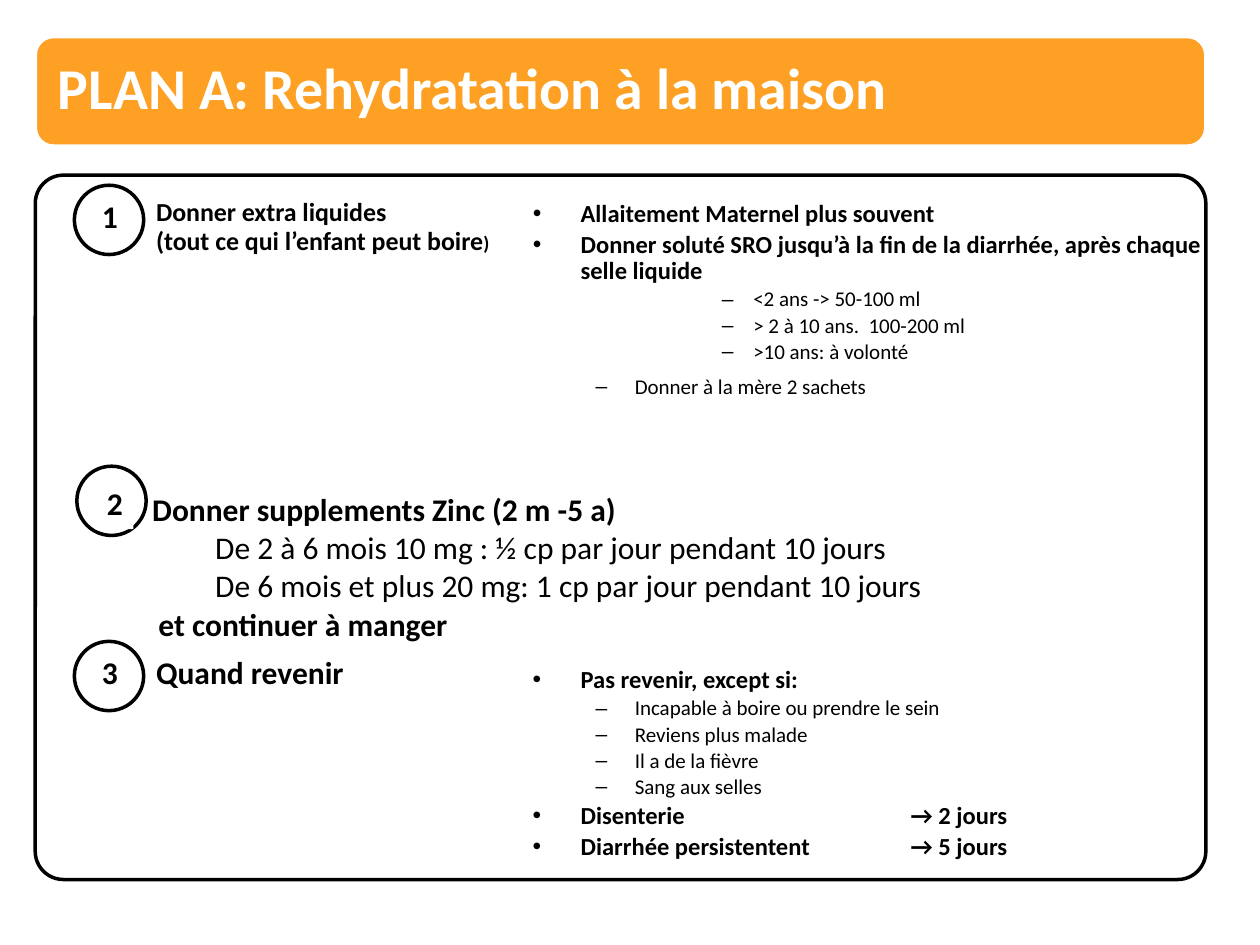
from lxml import etree
from pptx import Presentation
from pptx.dml.color import RGBColor
from pptx.enum.shapes import MSO_SHAPE as SHAPE
from pptx.enum.text import MSO_ANCHOR as ANCHOR, PP_ALIGN as ALIGN
from pptx.oxml.ns import qn
from pptx.util import Inches, Pt

BLACK, WHITE, ORANGE = "000000", "FFFFFF", "FDA023"
FONT = "Calibri"

# Paragraph styles: size, bold, bullet, left margin, hanging indent, level
BASE = dict(size=18, bold=True, bullet=None, margin=0, indent=0, level=0,
            spacing=0.9, before=0.17, align=ALIGN.LEFT, color=BLACK, tab=None)
HEAD = BASE
LEAD = BASE | dict(size=14.8, spacing=0.8)
POINT = BASE | dict(size=14, bullet="•", margin=0.38, indent=-0.38, tab=3)
DASH = BASE | dict(size=12, bold=False, bullet="–", margin=0.81, indent=-0.31, level=1)
DOSE = DASH | dict(margin=1.75, indent=-0.25, level=3)
ZINC = BASE | dict(spacing=1.0, before=0, align=ALIGN.JUSTIFY)
ZINC_DOSE = ZINC | dict(bold=False, margin=0.5, level=1)
TITLE = BASE | dict(size=33, before=0, color=WHITE)


def rgb(color):
    return RGBColor.from_string(color)


def add_box(shapes, kind, at, fill, line=None, corner=None):
    s = shapes.add_shape(kind, *map(Inches, at))
    s.shadow.inherit = False
    s.fill.solid()
    s.fill.fore_color.rgb = rgb(fill)
    if line:
        s.line.color.rgb = rgb(line)
        s.line.width = Pt(2)
    else:
        s.line.fill.background()
    if corner is not None:
        s.adjustments[0] = corner
    return s


def format_paragraph(p, style):
    values = dict(level=style["level"], alignment=style["align"],
                  line_spacing=style["spacing"],
                  space_before=Pt(style["before"] * style["size"]))
    for name, value in values.items():
        setattr(p, name, value)
    pPr = p._p.get_or_add_pPr()
    pPr.set("marL", str(Inches(style["margin"])))
    pPr.set("indent", str(Inches(style["indent"])))
    if style["bullet"]:
        etree.SubElement(pPr, qn("a:buFont"), typeface="Arial")
        etree.SubElement(pPr, qn("a:buChar"), char=style["bullet"])
    if style["tab"]:
        tabs = etree.SubElement(pPr, qn("a:tabLst"))
        etree.SubElement(tabs, qn("a:tab"), pos=str(Inches(style["tab"])), algn="l")


def add_run(p, text, style):
    r = p.add_run()
    r.text = text
    values = dict(name=FONT, size=Pt(style["size"]), bold=style["bold"])
    for name, value in values.items():
        setattr(r.font, name, value)
    r.font.color.rgb = rgb(style["color"])


def write(s, lines, anchor=ANCHOR.TOP):
    """Fill a shape with (style, text) lines."""
    tf = s.text_frame
    tf.word_wrap = True
    tf.vertical_anchor = anchor
    for i, (style, text) in enumerate(lines):
        p = tf.add_paragraph() if i else tf.paragraphs[0]
        format_paragraph(p, style)
        add_run(p, text, style)
    return tf


def add_text(shapes, at, lines, anchor=ANCHOR.TOP):
    return write(shapes.add_textbox(*map(Inches, at)), lines, anchor)


def add_step_number(shapes, number, circle, label):
    add_box(shapes, SHAPE.OVAL, (*circle, 0.55, 0.55), WHITE, BLACK)
    write(add_box(shapes, SHAPE.RECTANGLE, label, WHITE), [(HEAD, number)])


def add_title(shapes, text):
    group = shapes.add_group_shape().shapes
    add_box(group, SHAPE.ROUNDED_RECTANGLE, (0.28, 0.29, 9.29, 0.87), ORANGE, WHITE)
    tf = add_text(group, (0.32, 0.33, 9.21, 0.78), [(TITLE, text)], ANCHOR.MIDDLE)
    for side in ("left", "top", "right", "bottom"):
        setattr(tf, f"margin_{side}", Inches(0.14))


def main():
    prs = Presentation()
    prs.slide_width, prs.slide_height = Inches(10), Inches(7.5)
    shapes = prs.slides.add_slide(prs.slide_layouts[6]).shapes

    # Frame and title banner
    add_box(shapes, SHAPE.ROUNDED_RECTANGLE, (0.28, 1.39, 9.29, 5.59),
            WHITE, BLACK, corner=0.04)
    add_title(shapes, "PLAN A: Rehydratation à la maison")

    # Step 1: fluids
    add_step_number(shapes, "1", (0.59, 1.47), (0.71, 1.55, 0.31, 0.39))
    tf = add_text(shapes, (1.14, 1.55, 2.99, 0.63), [
        (LEAD, "Donner extra liquides"),
        (LEAD, "(tout ce qui l’enfant peut boire"),
    ])
    add_run(tf.paragraphs[-1], ")", LEAD | dict(size=11.1))
    add_text(shapes, (4.13, 1.55, 5.59, 0.55), [
        (POINT, "Allaitement Maternel plus souvent"),
        (POINT, "Donner soluté SRO jusqu’à la fin de la diarrhée, après chaque selle liquide"),
        (DOSE, "<2 ans -> 50-100 ml"),
        (DOSE, "> 2 à 10 ans.  100-200 ml"),
        (DOSE, ">10 ans: à volonté"),
    ])
    add_text(shapes, (4.13, 2.94, 6.14, 0.34), [(DASH, "Donner à la mère 2 sachets")])

    # Step 2: zinc
    add_step_number(shapes, "2", (0.61, 3.7), (0.75, 3.83, 0.31, 0.37))
    add_text(shapes, (1.11, 3.84, 7, 0.55), [
        (ZINC, "Donner supplements Zinc (2 m -5 a)"),
        (ZINC_DOSE, "De 2 à 6 mois 10 mg : ½ cp par jour pendant 10 jours"),
        (ZINC_DOSE, "De 6 mois et plus 20 mg: 1 cp par jour pendant 10 jours"),
        (HEAD | dict(margin=0.05), "et continuer à manger"),
    ])

    # Step 3: when to come back
    add_step_number(shapes, "3", (0.59, 5.09), (0.71, 5.17, 0.31, 0.39))
    add_text(shapes, (1.14, 5.17, 3.23, 0.55), [(HEAD, "Quand revenir")])
    add_text(shapes, (4.13, 5.25, 6.14, 0.55), [
        (POINT, "Pas revenir, except si:"),
        (DASH, "Incapable à boire ou prendre le sein"),
        (DASH, "Reviens plus malade"),
        (DASH, "Il a de la fièvre"),
        (DASH, "Sang aux selles"),
        (POINT, "Disenterie\t→ 2 jours"),
        (POINT, "Diarrhée persistentent\t→ 5 jours"),
    ])

    prs.save("out.pptx")


if __name__ == "__main__":
    main()
